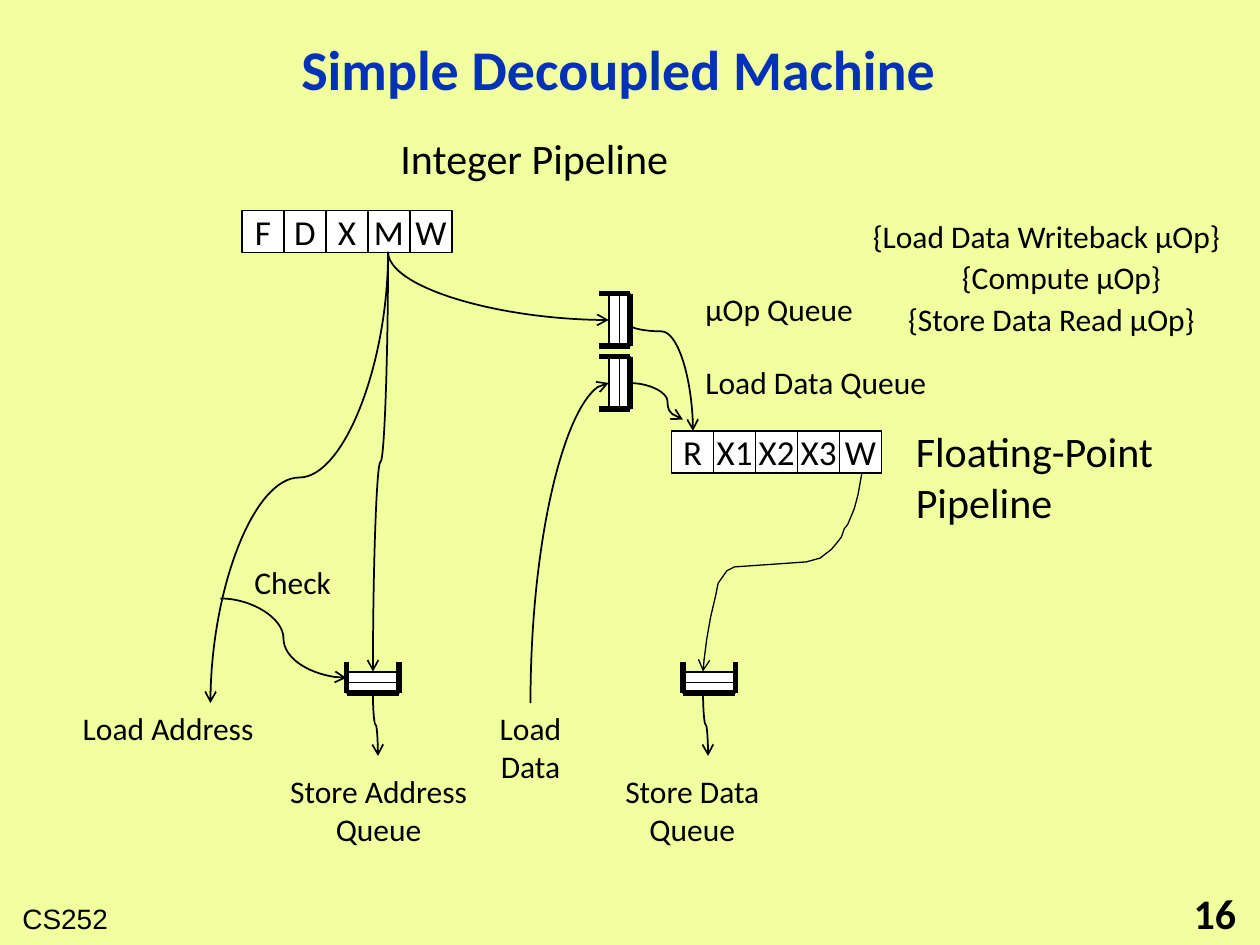
"""Build the slide on a simple decoupled machine with its pipelines and queues."""
from lxml.etree import SubElement
from pptx import Presentation
from pptx.dml.color import RGBColor
from pptx.enum.shapes import MSO_CONNECTOR as Connector, MSO_SHAPE as Shape
from pptx.enum.text import MSO_ANCHOR as Anchor, MSO_AUTO_SIZE as AutoSize, PP_ALIGN as Align
from pptx.oxml.ns import qn
from pptx.util import Inches, Pt

BACKGROUND, BLUE, BLACK, WHITE = "F1FF9E", "0332B7", "000000", "FFFFFF"
CELL, SLOT = 1 / 3, 1 / 12

TITLE = "Simple Decoupled Machine"
PIPELINES = [
    (1.92, 1.67, ["F", "D", "X", "M", "W"]),
    (5.33, 3.42, ["R", "X1", "X2", "X3", "W"]),
]
QUEUES = [(4.75, 2.33, "left"), (4.75, 2.83, "left"), (2.75, 5.25, "up"), (5.42, 5.25, "up")]
LABELS = [
    ("Integer Pipeline", 3.08, 1, 2.36, 0.5, 24, Align.LEFT, False),
    ("Floating-Point Pipeline", 7.17, 3.33, 2.33, 0.91, 24, Align.LEFT, True),
    ("µOp Queue", 5.5, 2.25, 1.38, 0.4, 18, Align.LEFT, False),
    ("Load Data Queue", 5.5, 2.83, 1.98, 0.4, 18, Align.LEFT, False),
    ("Check", 1.92, 4.42, 0.82, 0.4, 18, Align.LEFT, False),
    ("Load Address", 0.5, 5.58, 1.67, 0.4, 18, Align.CENTER, True),
    ("Store Address Queue", 2.17, 6.08, 1.67, 0.71, 18, Align.CENTER, True),
    ("Load Data", 3.75, 5.58, 0.92, 0.71, 18, Align.CENTER, True),
    ("Store Data Queue", 4.83, 6.08, 1.33, 0.71, 18, Align.CENTER, True),
    ("{Load Data Writeback µOp}", 6.64, 1.67, 3.33, 0.4, 18, Align.CENTER, True),
    ("{Compute µOp}", 7.01, 2, 2.83, 0.4, 18, Align.CENTER, True),
    ("{Store Data Read µOp}", 6.93, 2.33, 2.83, 0.4, 18, Align.CENTER, True),
]
CURVES = [
    ((3.08, 2), (2.96, 5.33), "vertical", "curvedConnector3", 0.5),
    ((3.08, 2), (1.67, 5.58), "vertical", "curvedConnector3", 0.5),
    ((1.75, 4.75), (2.75, 5.38), "horizontal", "curvedConnector3", 0.5),
    ((3.08, 2), (4.83, 2.54), "vertical", "curvedConnector2", None),
    ((4.21, 5.58), (4.83, 3.04), "vertical", "curvedConnector2", None),
    ((5, 2.58), (5.5, 3.42), "vertical", "curvedConnector3", 0.06),
    ((5, 3.04), (5.42, 3.33), "horizontal", "curvedConnector3", 0.71),
    ((2.96, 5.5), (3, 6), "vertical", "curvedConnector3", 0.5),
    ((5.58, 5.5), (5.62, 6), "vertical", "curvedConnector3", 0.5),
]
STORE_PATH = [
    (6.84, 3.76), (6.81, 3.93), (6.78, 4.04), (6.73, 4.16), (6.7, 4.2), (6.68, 4.26),
    (6.65, 4.3), (6.6, 4.36), (6.51, 4.43), (6.4, 4.46), (6.12, 4.48), (5.83, 4.5),
    (5.77, 4.53), (5.7, 4.63), (5.68, 4.73), (5.64, 4.9), (5.61, 5.07), (5.58, 5.3),
    (5.58, 5.33),
]


def color(value):
    return RGBColor.from_string(value)


def format_text(shape, text, size, align, ink=BLACK, bold=False, font="Calibri"):
    frame = shape.text_frame
    frame.text = text
    paragraph = frame.paragraphs[0]
    paragraph.alignment = align
    style = paragraph.runs[0].font
    style.name, style.size, style.bold = font, Pt(size), bold
    style.color.rgb = color(ink)
    return frame


def place(shape, left, top, width, height):
    shape.left, shape.top = Inches(left), Inches(top)
    shape.width, shape.height = Inches(width), Inches(height)


def add_label(slide, text, left, top, width, height, size, align, wrap, **style):
    box = slide.shapes.add_textbox(*map(Inches, (left, top, width, height)))
    frame = format_text(box, text, size, align, **style)
    frame.word_wrap = wrap
    frame.auto_size = AutoSize.SHAPE_TO_FIT_TEXT
    return frame


def add_cell(shapes, left, top, width, height):
    cell = shapes.add_shape(Shape.RECTANGLE, *map(Inches, (left, top, width, height)))
    cell.shadow.inherit = False
    cell.fill.solid()
    cell.fill.fore_color.rgb = color(WHITE)
    cell.line.color.rgb = color(BLACK)
    cell.line.width = Pt(1)
    return cell


def add_pipeline(slide, left, top, stages):
    for index, stage in enumerate(stages):
        cell = add_cell(slide.shapes, left + index * CELL, top, CELL, CELL)
        frame = format_text(cell, stage, 20, Align.CENTER)
        frame.word_wrap = True
        frame.vertical_anchor = Anchor.MIDDLE
        frame.margin_left = frame.margin_right = frame.margin_top = frame.margin_bottom = 0


def add_line(shapes, start, end, width, kind=Connector.STRAIGHT):
    line = shapes.add_connector(kind, *map(Inches, (*start, *end)))
    line.line.color.rgb = color(BLACK)
    line.line.width = Pt(width)
    SubElement(line.element.spPr, qn("a:effectLst"))
    return line


def add_queue(slide, left, top, opening):
    shapes = slide.shapes.add_group_shape().shapes
    depth, breadth = 3 * SLOT, 5 * SLOT

    def turn(along, across):
        return (along, across) if opening == "left" else (across, along)

    def point(along, across):
        x, y = turn(along, across)
        return left + x, top + y

    for index in (1, 2):
        add_cell(shapes, *point(index * SLOT, 0), *turn(SLOT, breadth))
    for start, end in [
        ((0, 0), (depth, 0)),
        ((0, breadth), (depth, breadth)),
        ((depth, 0), (depth, breadth)),
    ]:
        add_line(shapes, point(*start), point(*end), 3)


def add_arrowhead(shape):
    SubElement(shape.line._get_or_add_ln(), qn("a:tailEnd"), type="arrow")


def add_curve(slide, start, end, direction, preset, bend):
    (x1, y1), (x2, y2) = start, end
    width, height = abs(x2 - x1), abs(y2 - y1)
    flip_h, flip_v, rotation = x2 < x1, y2 < y1, 0
    if direction == "vertical":
        width, height = height, width
        rotation = 270 if x2 > x1 and y2 > y1 else 90
        flip_h = (y2 > y1) == (rotation == 270)
        flip_v = (x2 > x1) == (rotation == 90)
    left, top = (x1 + x2 - width) / 2, (y1 + y2 - height) / 2
    curve = add_line(slide.shapes, (left, top), (left + width, top + height), 1, Connector.CURVE)
    properties = curve.element.spPr
    transform = properties.find(qn("a:xfrm"))
    for name, value in (("rot", rotation * 60000), ("flipH", int(flip_h)), ("flipV", int(flip_v))):
        if value:
            transform.set(name, str(value))
    geometry = properties.find(qn("a:prstGeom"))
    geometry.set("prst", preset)
    if bend is not None:
        guides = geometry.find(qn("a:avLst"))
        SubElement(guides, qn("a:gd"), name="adj1", fmla=f"val {round(bend * 100000)}")
    add_arrowhead(curve)


def add_store_path(slide):
    start, *points = [(Inches(x), Inches(y)) for x, y in STORE_PATH]
    builder = slide.shapes.build_freeform(*start)
    builder.add_line_segments(points, close=False)
    arrow = builder.convert_to_shape()
    arrow.shadow.inherit = False
    arrow.fill.background()
    arrow.line.color.rgb = color(BLACK)
    arrow.line.width = Pt(0.75)
    add_arrowhead(arrow)


def main():
    presentation = Presentation()
    presentation.slide_width, presentation.slide_height = Inches(10), Inches(7.5)
    slide = presentation.slides.add_slide(presentation.slide_layouts[5])
    slide.background.fill.solid()
    slide.background.fill.fore_color.rgb = color(BACKGROUND)

    title = slide.shapes.title
    place(title, 0.92, 0.17, 7.98, 0.81)
    frame = format_text(title, TITLE, 32, Align.CENTER, BLUE, True)
    frame.vertical_anchor = Anchor.MIDDLE
    frame.paragraphs[0].line_spacing = 0.9

    for pipeline in PIPELINES:
        add_pipeline(slide, *pipeline)
    for queue in QUEUES:
        add_queue(slide, *queue)
    for curve in CURVES:
        add_curve(slide, *curve)
    add_store_path(slide)
    for label in LABELS:
        add_label(slide, *label)
    add_label(slide, "CS252", 0.08, 7.11, 0.89, 0.37, 16, Align.LEFT, False, font="Arial")
    number = add_label(slide, "16", 7.83, 7.08, 2.08, 0.32, 24, Align.RIGHT, True, bold=True)
    number.auto_size = AutoSize.NONE
    number.vertical_anchor = Anchor.MIDDLE
    presentation.save("out.pptx")


if __name__ == "__main__":
    main()
